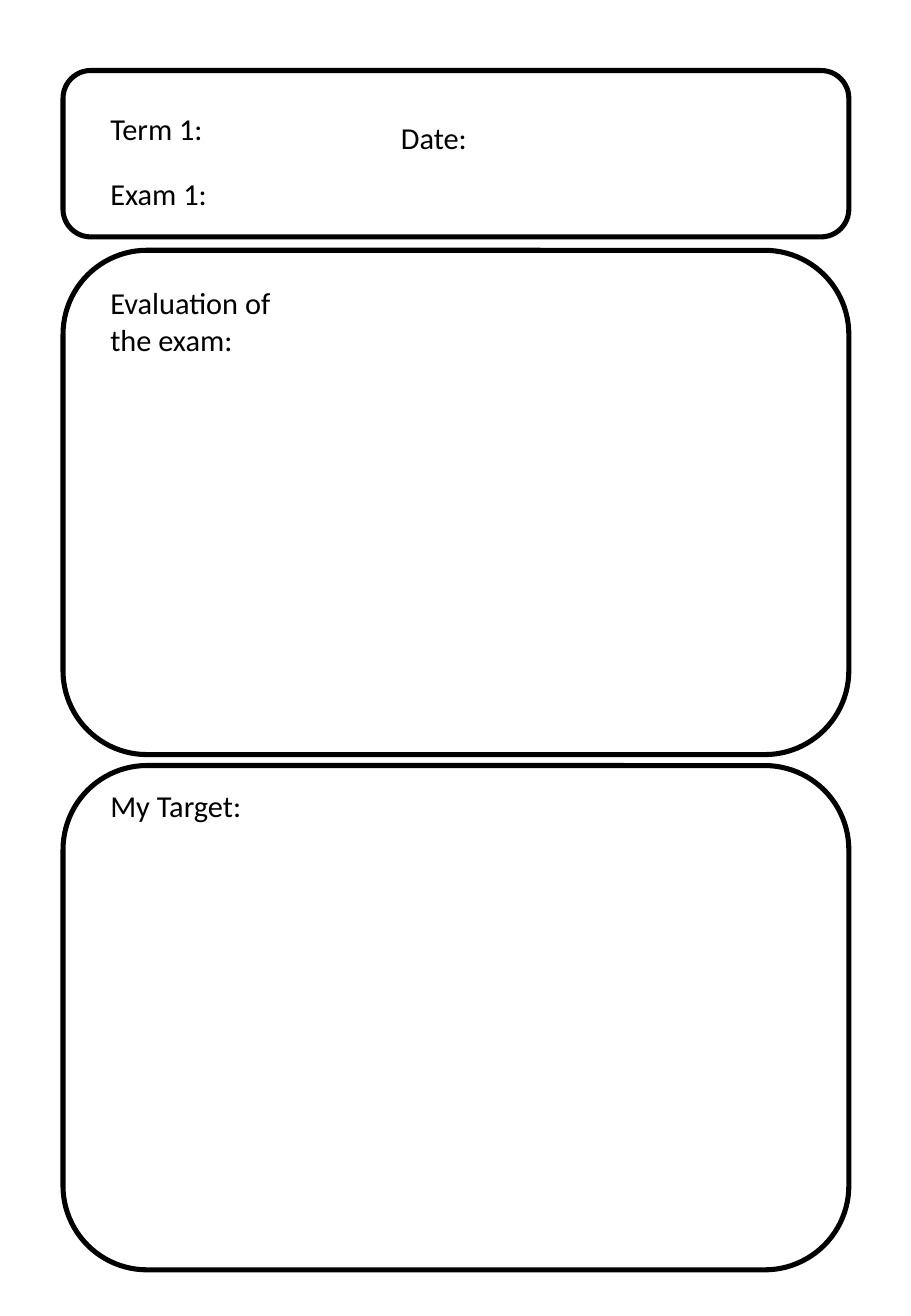
from dataclasses import dataclass

from pptx import Presentation
from pptx.dml.color import RGBColor
from pptx.enum.shapes import MSO_SHAPE
from pptx.enum.text import MSO_ANCHOR, MSO_AUTO_SIZE, PP_ALIGN
from pptx.util import Pt


@dataclass(frozen=True)
class Theme:
    ink: RGBColor = RGBColor(0, 0, 0)
    paper: RGBColor = RGBColor(255, 255, 255)
    font: str = "Calibri"
    size: float = 18
    border: float = 3


THEME = Theme()
SLIDE_W, SLIDE_H = 540, 779.76
PANEL_X, PANEL_W = 37.4, 465.8
LABEL_X, LABEL_W = 58.3, 112.3
LINE_H, LABEL_PAD = 22, 7.2
DATE_RIGHT, DATE_BOTTOM = 33.2, 23

PANELS = [
    {"top": 41.8, "height": 98.6, "date": "Date:",
     "labels": [("Term 1:", 61.9, 1), ("Exam 1:", 100.1, 1)]},
    {"top": 148.3, "height": 298.8,
     "labels": [("Evaluation of the exam:", 164.9, 2)]},
    {"top": 453.6, "height": 298.8,
     "labels": [("My Target:", 463, 1)]},
]


def write(tf, text, align):
    tf.word_wrap = True
    p = tf.paragraphs[0]
    p.alignment = align
    r = p.add_run()
    r.text = text
    r.font.name = THEME.font
    r.font.size = Pt(THEME.size)
    r.font.color.rgb = THEME.ink


def add_panel(s, top, height):
    sp = s.shapes.add_shape(MSO_SHAPE.ROUNDED_RECTANGLE, Pt(PANEL_X), Pt(top),
                            Pt(PANEL_W), Pt(height))
    sp.shadow.inherit = False
    sp.fill.solid()
    sp.fill.fore_color.rgb = THEME.paper
    sp.line.color.rgb = THEME.ink
    sp.line.width = Pt(THEME.border)
    return sp


def add_date(sp, text):
    tf = sp.text_frame
    tf.vertical_anchor = MSO_ANCHOR.MIDDLE
    tf.margin_right = Pt(DATE_RIGHT)
    tf.margin_bottom = Pt(DATE_BOTTOM)
    write(tf, text, PP_ALIGN.CENTER)


def add_label(s, text, top, lines):
    sp = s.shapes.add_textbox(Pt(LABEL_X), Pt(top), Pt(LABEL_W),
                              Pt(lines * LINE_H + LABEL_PAD))
    write(sp.text_frame, text, PP_ALIGN.LEFT)
    sp.text_frame.auto_size = MSO_AUTO_SIZE.SHAPE_TO_FIT_TEXT


def main():
    prs = Presentation()
    prs.slide_width, prs.slide_height = Pt(SLIDE_W), Pt(SLIDE_H)
    s = prs.slides.add_slide(prs.slide_layouts[6])
    s.background.fill.solid()
    s.background.fill.fore_color.rgb = THEME.paper
    for panel in PANELS:
        sp = add_panel(s, panel["top"], panel["height"])
        if "date" in panel:
            add_date(sp, panel["date"])
        for label in panel["labels"]:
            add_label(s, *label)
    prs.save("out.pptx")


if __name__ == "__main__":
    main()
